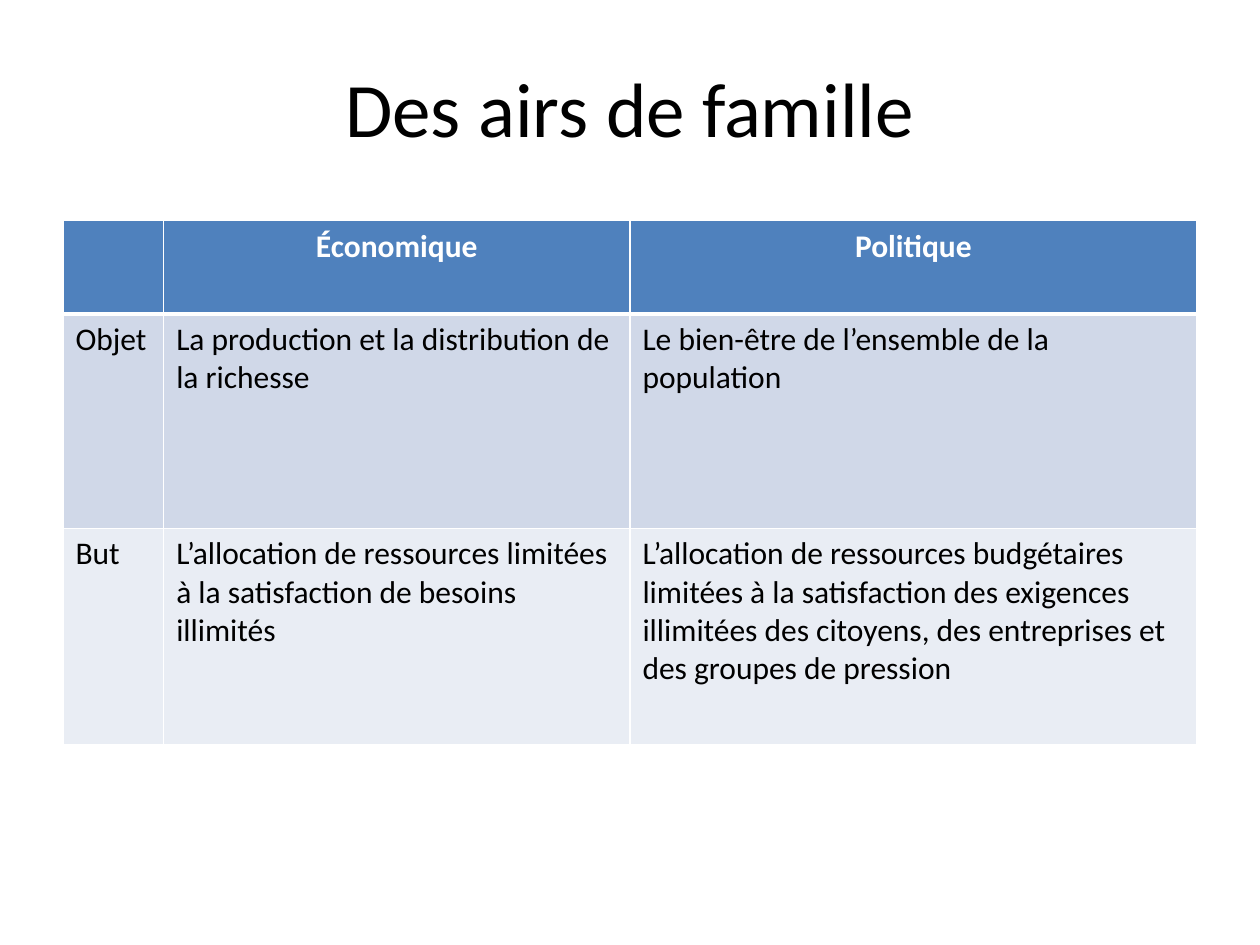
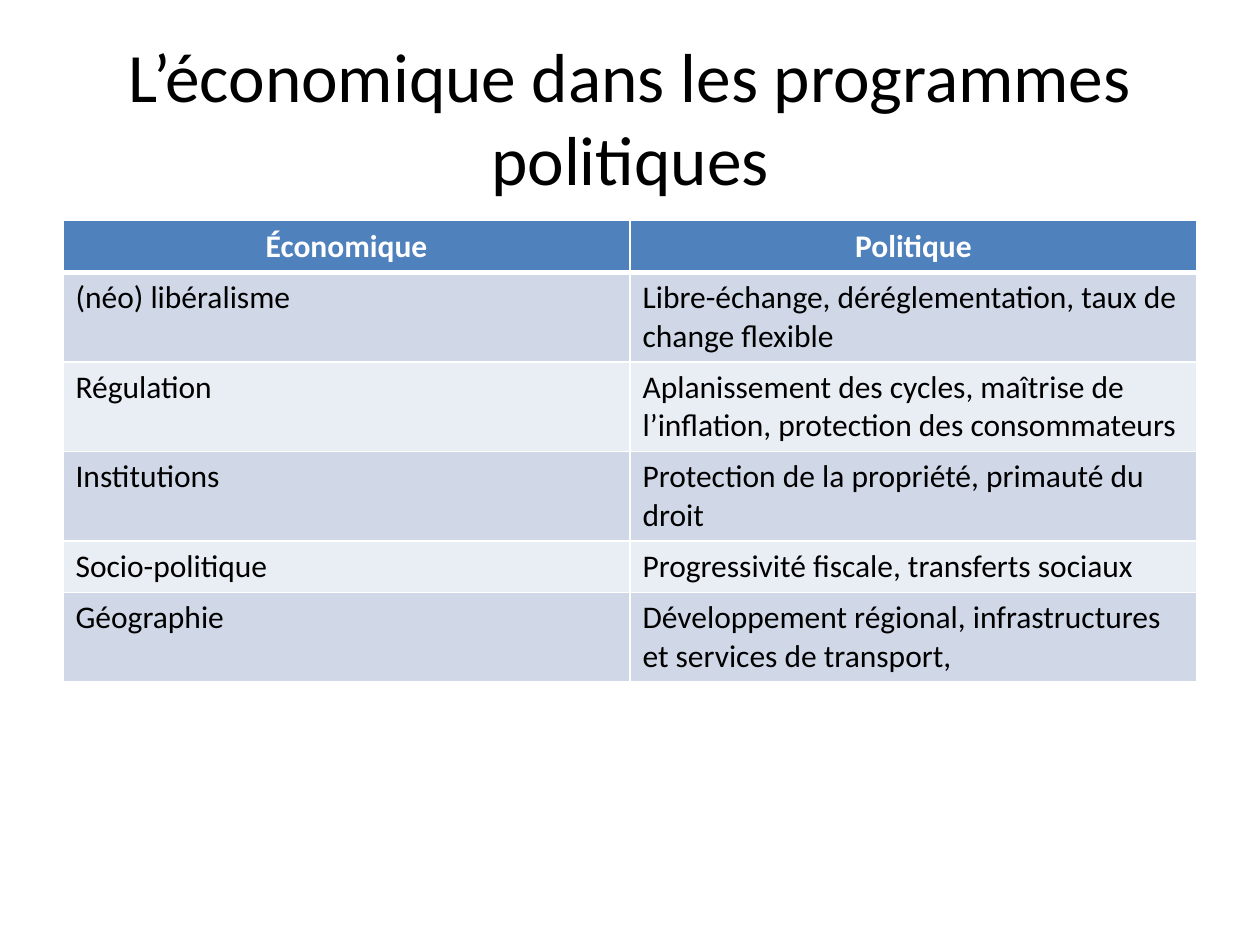
from lxml import etree
from pptx import Presentation
from pptx.dml.color import RGBColor
from pptx.enum.text import MSO_AUTO_SIZE as AutoSize, MSO_ANCHOR as Anchor, PP_ALIGN as Align
from pptx.oxml.ns import qn
from pptx.util import Cm, Pt

# Shared style
FONT = "Calibri"
BLACK, WHITE = "000000", "FFFFFF"
HEADER_FILL = "4F81BD"
BAND_FILLS = ["D0D8E8", "E9EDF4"]
LEFT, CONTENT_WIDTH = Cm(1.27), Cm(22.86)
TITLE_TOP, TABLE_TOP = Cm(0.76), Cm(4.45)

# Content; lengths in centimetres
SLIDES = [
    {
        "title": "Des airs de famille",
        "title_size": 44,
        "title_height": 2.77,
        "columns": [2.03, 9.4, 11.43],
        "row_heights": [1.88, 4.32, 4.37],
        "table_height": 10.57,
        "rows": [
            ["", "Économique", "Politique"],
            ["Objet",
             "La production et la distribution de la richesse",
             "Le bien-être de l’ensemble de la population"],
            ["But",
             "L’allocation de ressources limitées à la satisfaction de besoins illimités",
             "L’allocation de ressources budgétaires limitées à la satisfaction des exigences "
             "illimitées des citoyens, des entreprises et des groupes de pression"],
        ],
    },
    {
        "title": "L’économique dans les programmes politiques",
        "title_size": 39.6,
        "title_height": 3.18,
        "columns": [11.43, 11.43],
        "row_heights": [1.04] * 6,
        "table_height": 9.17,
        "rows": [
            ["Économique", "Politique"],
            ["(néo) libéralisme", "Libre-échange, déréglementation, taux de change flexible"],
            ["Régulation",
             "Aplanissement des cycles, maîtrise de l’inflation, protection des consommateurs"],
            ["Institutions", "Protection de la propriété, primauté du droit"],
            ["Socio-politique", "Progressivité fiscale, transferts sociaux"],
            ["Géographie", "Développement régional, infrastructures et services de transport,"],
        ],
    },
]


def add_run(paragraph, text, size, color, bold=False):
    run = paragraph.add_run()
    run.text = text
    run.font.name = FONT
    run.font.size = Pt(size)
    run.font.bold = bold
    run.font.color.rgb = RGBColor.from_string(color)


def add_border(cell, side, points):
    properties = cell._tc.get_or_add_tcPr()
    line = etree.SubElement(properties, qn(f"a:ln{side}"), w=str(Pt(points)))
    fill = etree.SubElement(line, qn("a:solidFill"))
    etree.SubElement(fill, qn("a:srgbClr"), val=WHITE)


presentation = Presentation()
presentation.slide_width, presentation.slide_height = Cm(25.4), Cm(19.05)
title_only = presentation.slide_layouts[5]

for content in SLIDES:
    slide = presentation.slides.add_slide(title_only)

    # Title
    title = slide.shapes.title
    title.left, title.top = LEFT, TITLE_TOP
    title.width, title.height = CONTENT_WIDTH, Cm(content["title_height"])
    title.text_frame.auto_size = AutoSize.NONE
    title.text_frame.vertical_anchor = Anchor.MIDDLE
    paragraph = title.text_frame.paragraphs[0]
    paragraph.alignment = Align.CENTER
    add_run(paragraph, content["title"], content["title_size"], BLACK)

    # Table grid
    rows = content["rows"]
    table_shape = slide.shapes.add_table(
        len(rows), len(content["columns"]), LEFT, TABLE_TOP,
        CONTENT_WIDTH, Cm(content["table_height"]))
    table = table_shape.table
    for column, width in zip(table.columns, content["columns"]):
        column.width = Cm(width)
    for row, height in zip(table.rows, content["row_heights"]):
        row.height = Cm(height)
    table_shape.height = Cm(content["table_height"])

    # Cells: blue header with a thick rule below, then alternating bands
    for row_index, texts in enumerate(rows):
        is_header = row_index == 0
        fill = HEADER_FILL if is_header else BAND_FILLS[(row_index - 1) % 2]
        for column_index, text in enumerate(texts):
            cell = table.cell(row_index, column_index)
            add_border(cell, "L", 1)
            add_border(cell, "R", 1)
            add_border(cell, "T", 3 if row_index == 1 else 1)
            add_border(cell, "B", 3 if is_header else 1)
            cell.fill.solid()
            cell.fill.fore_color.rgb = RGBColor.from_string(fill)
            if text:
                paragraph = cell.text_frame.paragraphs[0]
                paragraph.alignment = Align.CENTER if is_header else Align.LEFT
                add_run(paragraph, text, 18, WHITE if is_header else BLACK, is_header)

presentation.save("out.pptx")
